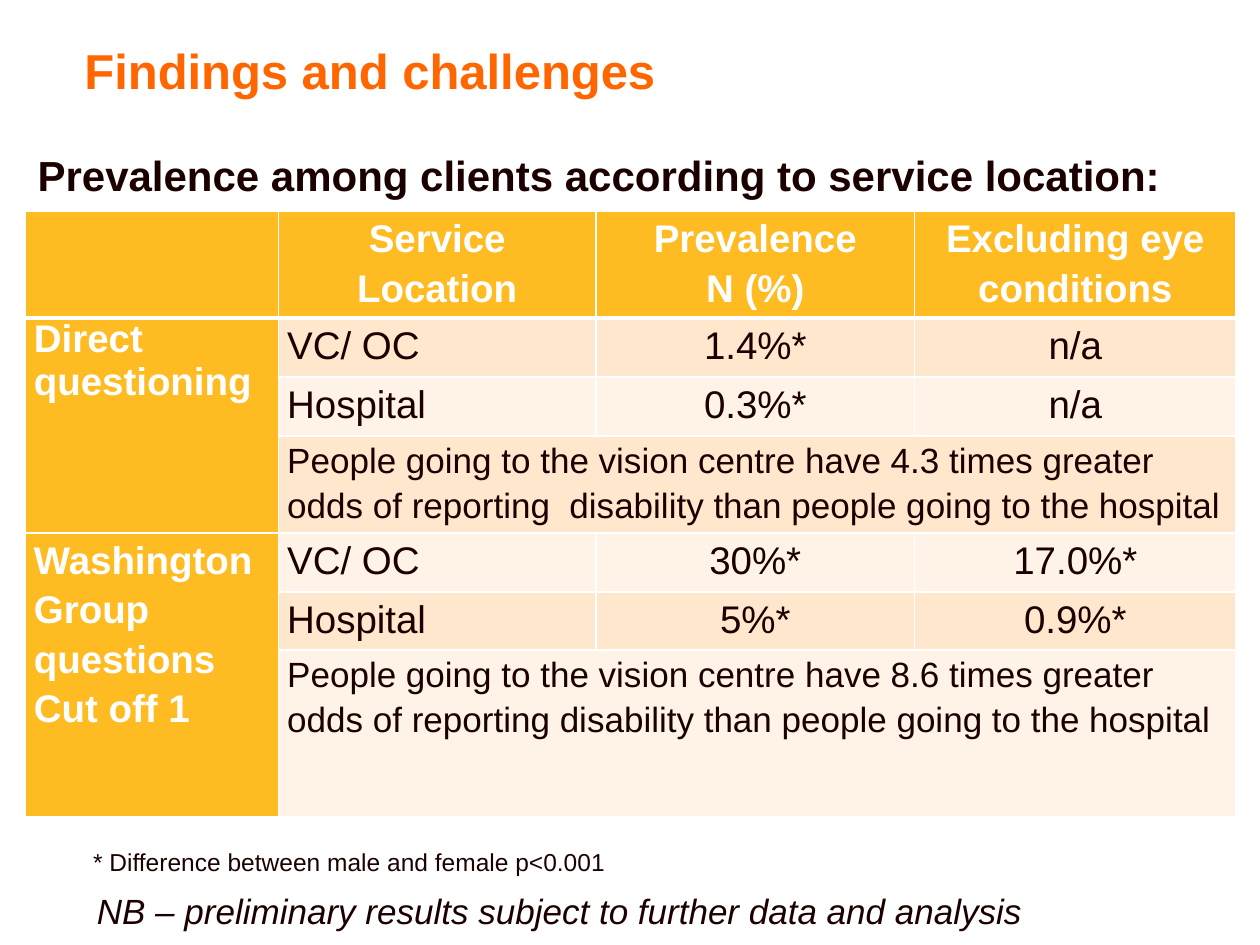
import pptx
import pptx.util
import pptx.dml.color
import pptx.enum.text
import pptx.oxml
import pptx.oxml.ns

Inches = pptx.util.Inches
ALIGN = pptx.enum.text.PP_ALIGN

THEME = {
    "font": "Arial",
    "title": "FF6600", "ink": "1C0000", "white": "FFFFFF",
    "head": "FFBB22", "bands": ("FFE7CD", "FFF3E8"),
    "title_size": 28, "subtitle_size": 24, "cell_size": 22,
    "note_size": 20, "footnote_size": 14,
}

# Content
TITLE = "Findings and challenges"
TEXTS = [  # text, (left, top, width, height), size, bold, italic
    ("Prevalence among clients according to service location:",
     (0.2, 1.14, 9.62, 0.91), THEME["subtitle_size"], True, False),
    ("* Difference between male and female p<0.001",
     (0.64, 6.67, 8.65, 0.34), THEME["footnote_size"], False, False),
    ("NB – preliminary results subject to further data and analysis",
     (0.67, 7.01, 8.69, 0.44), THEME["note_size"], False, True),
]
HEADER = ["", "Service Location", "Prevalence\nN (%)", "Excluding eye conditions"]
GROUPS = [  # label, line spacing, data rows, finding across the data columns
    ("Direct questioning", 1.0,
     [("VC/ OC", "1.4%*", "n/a"), ("Hospital", "0.3%*", "n/a")],
     "People going to the vision centre have 4.3 times greater odds of "
     "reporting  disability than people going to the hospital"),
    ("Washington Group questions Cut off 1", 1.15,
     [("VC/ OC", "30%*", "17.0%*"), ("Hospital", "5%*", "0.9%*")],
     "People going to the vision centre have 8.6 times greater odds of "
     "reporting disability than people going to the hospital"),
]
COLUMN_WIDTHS = [2.01, 2.52, 2.53, 2.55]
ROW_HEIGHTS = [0.79, 0.47, 0.47, 0.47, 0.47, 0.46, 1.32]


def rgb(value):
    return pptx.dml.color.RGBColor.from_string(value)


def add_run(paragraph, text, size, color, bold=False, italic=False):
    run = paragraph.add_run()
    run.text = text
    run.font.name = THEME["font"]
    run.font.size = pptx.util.Pt(size)
    run.font.color.rgb = rgb(color)
    run.font.bold = bold
    run.font.italic = italic


def set_borders(cell, bottom):
    for side, points in (("L", 1), ("R", 1), ("T", 1), ("B", bottom)):
        cell._tc.get_or_add_tcPr().append(pptx.oxml.parse_xml(
            f'<a:ln{side} {pptx.oxml.ns.nsdecls("a")} w="{points * 12700}"><a:solidFill>'
            f'<a:srgbClr val="{THEME["white"]}"/></a:solidFill></a:ln{side}>'))


def fill_cell(cell, text, strong=False, align=None, size=THEME["cell_size"], spacing=1.15):
    cell.margin_left = cell.margin_right = Inches(0.07)
    cell.margin_top = cell.margin_bottom = 0
    for index, line in enumerate(text.split("\n")):
        frame = cell.text_frame
        paragraph = frame.add_paragraph() if index else frame.paragraphs[0]
        paragraph.alignment = align
        paragraph.line_spacing = spacing
        if line:
            add_run(paragraph, line, size, THEME["white" if strong else "ink"], strong)


presentation = pptx.Presentation()
presentation.slide_width, presentation.slide_height = Inches(10), Inches(7.5)
slide = presentation.slides.add_slide(presentation.slide_layouts[5])

# Title
title = slide.shapes.title
title.left, title.top, title.width, title.height = map(Inches, (0.67, 0.32, 6.56, 0.76))
frame = title.text_frame
frame.margin_left = frame.margin_top = frame.margin_right = frame.margin_bottom = 0
frame.vertical_anchor = pptx.enum.text.MSO_ANCHOR.TOP
frame.auto_size = pptx.enum.text.MSO_AUTO_SIZE.NONE
frame.paragraphs[0].alignment = ALIGN.LEFT
add_run(frame.paragraphs[0], TITLE, THEME["title_size"], THEME["title"], True)

# Subtitle and notes
for text, box, size, bold, italic in TEXTS:
    frame = slide.shapes.add_textbox(*map(Inches, box)).text_frame
    frame.word_wrap = True
    add_run(frame.paragraphs[0], text, size, THEME["ink"], bold, italic)

# Table grid, fills and borders
table = slide.shapes.add_table(
    len(ROW_HEIGHTS), len(COLUMN_WIDTHS), Inches(0.2), Inches(1.68),
    Inches(sum(COLUMN_WIDTHS)), Inches(sum(ROW_HEIGHTS))).table
for column, width in zip(table.columns, COLUMN_WIDTHS):
    column.width = Inches(width)
for row_index, row in enumerate(table.rows):
    row.height = Inches(ROW_HEIGHTS[row_index])
    for column_index, cell in enumerate(row.cells):
        set_borders(cell, bottom=1 if row_index else 3)
        is_head = row_index == 0 or column_index == 0
        cell.fill.solid()
        cell.fill.fore_color.rgb = rgb(
            THEME["head"] if is_head else THEME["bands"][(row_index - 1) % 2])

# Table header
for column_index, text in enumerate(HEADER):
    fill_cell(table.cell(0, column_index), text, strong=True, align=ALIGN.CENTER)

# Table groups: label, data rows, then the finding
top = 1
for label, spacing, records, finding in GROUPS:
    last = top + len(records)
    table.cell(top, 0).merge(table.cell(last, 0))
    fill_cell(table.cell(top, 0), label, strong=True, spacing=spacing)
    for row_index, record in enumerate(records, top):
        for column_index, text in enumerate(record, 1):
            fill_cell(table.cell(row_index, column_index), text,
                      align=ALIGN.CENTER if column_index > 1 else None)
    table.cell(last, 1).merge(table.cell(last, 3))
    fill_cell(table.cell(last, 1), finding, size=THEME["note_size"])
    top = last + 1

presentation.save("out.pptx")
